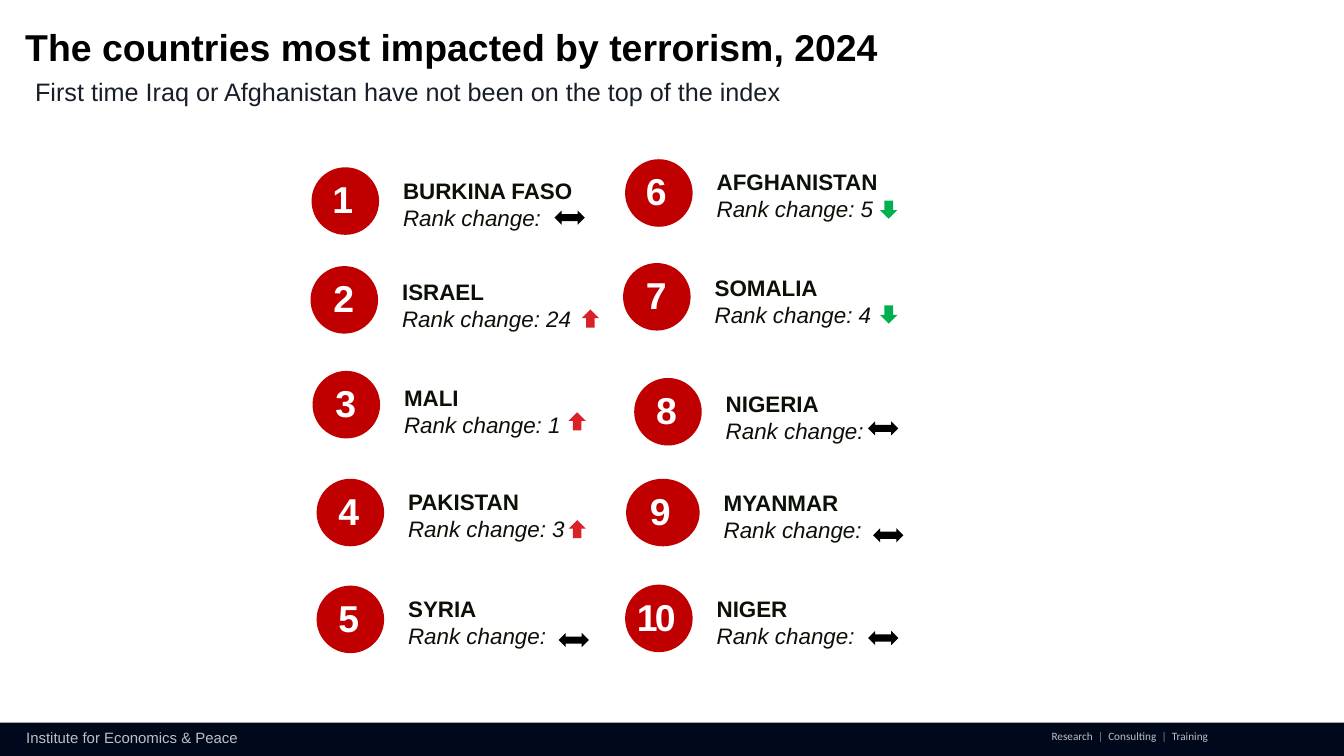
from collections import namedtuple

from pptx import Presentation
from pptx.dml.color import RGBColor
from pptx.enum import shapes, text
from pptx.util import Inches, Pt

FONT = "Arial"
RED, INK, WHITE = "C00000", "0B1107", "FFFFFF"
GREY, DARK_GREY = "BFBFBF", "888888"
CIRCLE = 0.67
INSETS = (0.1, 0.05)

# Arrow kinds: preset shape, colour, width, height
ARROWS = {
    "same": (shapes.MSO_SHAPE.LEFT_RIGHT_ARROW, "000000", 0.3, 0.14),
    "up": (shapes.MSO_SHAPE.UP_ARROW, "DA2128", 0.17, 0.18),
    "down": (shapes.MSO_SHAPE.DOWN_ARROW, "00B050", 0.17, 0.18),
}

Country = namedtuple(
    "Country",
    "name change left top width number_centre label_top trend arrow_left arrow_top")

# Listed in rank order
COUNTRIES = [
    Country("BURKINA FASO", "", 3.09, 1.66, CIRCLE, 3.4, 1.71, "same", 5.5, 2.09),
    Country("ISRAEL", "24", 3.08, 2.64, CIRCLE, 3.41, 2.71, "up", 5.77, 3.07),
    Country("MALI", "1", 3.1, 3.68, CIRCLE, 3.43, 3.76, "up", 5.64, 4.09),
    Country("PAKISTAN", "3", 3.14, 4.75, CIRCLE, 3.46, 4.79, "up", 5.64, 5.16),
    Country("SYRIA", "", 3.14, 5.81, CIRCLE, 3.46, 5.86, "same", 5.54, 6.28),
    Country("AFGHANISTAN", "5", 6.2, 1.58, CIRCLE, 6.51, 1.62, "down", 8.73, 1.99),
    Country("SOMALIA", "4", 6.18, 2.61, CIRCLE, 6.51, 2.67, "down", 8.73, 3.03),
    Country("NIGERIA", "", 6.29, 3.75, CIRCLE, 6.61, 3.82, "same", 8.61, 4.18),
    Country("MYANMAR", "", 6.21, 4.75, 0.73, 6.55, 4.8, "same", 8.66, 5.24),
    Country("NIGER", "", 6.2, 5.8, CIRCLE, 6.51, 5.86, "same", 8.61, 6.26),
]


def colour(value):
    return RGBColor.from_string(value)


def style(font, size, hue, bold=False, italic=False, name=FONT):
    font.name, font.size = name, Pt(size)
    font.bold, font.italic = bold, italic
    font.color.rgb = colour(hue)


def set_insets(frame, across, down):
    frame.margin_left = frame.margin_right = Inches(across)
    frame.margin_top = frame.margin_bottom = Inches(down)
    frame.vertical_anchor = text.MSO_ANCHOR.TOP
    frame.word_wrap = True


def add_solid(parent, preset, left, top, width, height, fill):
    shape = parent.shapes.add_shape(
        preset, Inches(left), Inches(top), Inches(width), Inches(height))
    shape.shadow.inherit = False
    shape.fill.solid()
    shape.fill.fore_color.rgb = colour(fill)
    shape.line.fill.background()
    return shape


def add_text(parent, left, top, width, height, words, insets=INSETS):
    box = parent.shapes.add_textbox(
        Inches(left), Inches(top), Inches(width), Inches(height))
    set_insets(box.text_frame, *insets)
    box.text_frame.text = words
    return box.text_frame.paragraphs


def add_title(page, words):
    title = page.shapes.title
    title.left, title.top = Inches(0.25), Inches(0.29)
    title.width, title.height = Inches(10.79), Inches(0.4)
    frame = title.text_frame
    set_insets(frame, 0, 0)
    frame.auto_size = text.MSO_AUTO_SIZE.NONE
    frame.text = words
    para = frame.paragraphs[0]
    para.alignment = text.PP_ALIGN.LEFT
    para.line_spacing = 0.9
    style(para.runs[0].font, 26.7, "000000", bold=True)


def add_footer(page):
    add_solid(page, shapes.MSO_SHAPE.RECTANGLE, 0, 7.17, 13.33, 0.33, "00081C")
    para = add_text(page, 0.13, 7.16, 2.4, 0.31,
                    "Institute for Economics & Peace", (0.13, 0.07))[0]
    style(para.runs[0].font, 10.7, GREY)

    para = add_text(page, 8.09, 7.17, 3.99, 0.33, "", (0.1, 0.1))[0]
    para.alignment = text.PP_ALIGN.RIGHT
    for words in ("Research  ", "|", "  Consulting  ", "|", "  Training"):
        span = para.add_run()
        span.text = words
        style(span.font, 8, DARK_GREY if words == "|" else GREY, name="Calibri")


def add_country(page, rank, country):
    group = page.shapes.add_group_shape()

    # Name and rank change
    label_left = country.left + country.width + 0.14
    change = f"Rank change: {country.change}".rstrip()
    name, detail = add_text(group, label_left, country.label_top, 2.2, 0.64,
                            f"{country.name}\n{change}")
    style(name.runs[0].font, 16, INK, bold=True)
    style(detail.runs[0].font, 16, INK, italic=True)

    # Numbered circle
    add_solid(group, shapes.MSO_SHAPE.OVAL, country.left, country.top,
              country.width, CIRCLE, RED)
    number = add_text(group, country.number_centre - 0.45, country.top + 0.04,
                      0.9, 0.55, str(rank))[0]
    number.alignment = text.PP_ALIGN.CENTER
    span = number.runs[0]
    style(span.font, 26.7, WHITE, bold=True)
    span.font._element.set("spc", "-200")

    # Trend arrow
    preset, hue, width, height = ARROWS[country.trend]
    add_solid(group, preset, country.arrow_left, country.arrow_top,
              width, height, hue)


def main():
    deck = Presentation()
    deck.slide_width, deck.slide_height = Inches(13.33), Inches(7.5)
    page = deck.slides.add_slide(deck.slide_layouts.get_by_name("Title Only"))

    # Heading
    add_title(page, "The countries most impacted by terrorism, 2024")
    subtitle = add_text(
        page, 0.25, 0.71, 9.91, 0.4,
        "First time Iraq or Afghanistan have not been on the top of the index")[0]
    style(subtitle.runs[0].font, 18, "181E28")

    # Ranking
    for rank, country in enumerate(COUNTRIES, start=1):
        add_country(page, rank, country)

    add_footer(page)
    deck.save("out.pptx")


if __name__ == "__main__":
    main()
